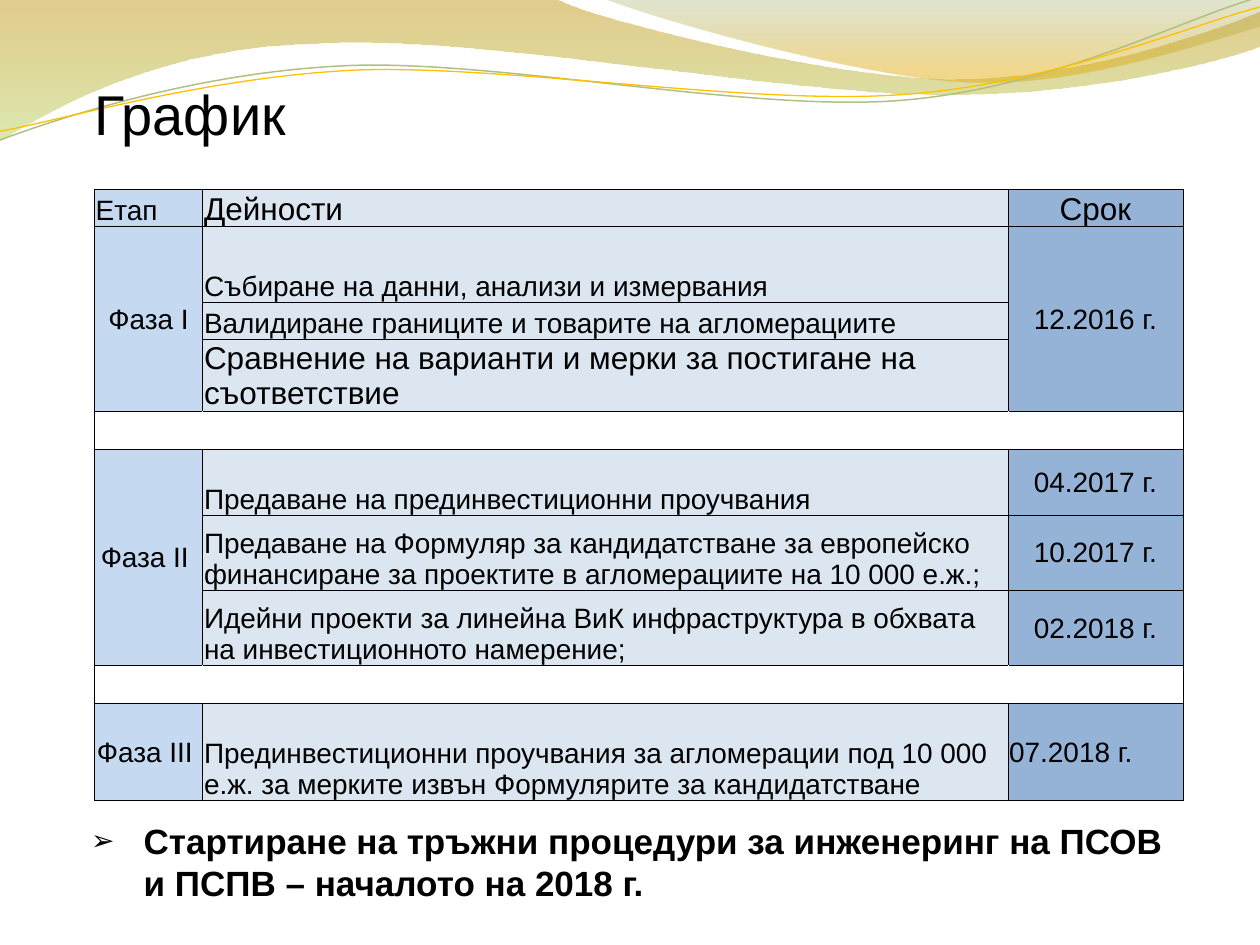
from lxml import etree
from pptx import Presentation
from pptx.dml.color import RGBColor
from pptx.enum import text
from pptx.oxml import parse_xml
from pptx.oxml.ns import nsdecls, qn
from pptx.util import Pt

FONT = "Arial"
BLACK, WHITE = "000000", "FFFFFF"
STAGE, ACTIVITY, DEADLINE = "C5D9F1", "DCE6F1", "95B3D7"
CENTER, LEFT = text.PP_ALIGN.CENTER, text.PP_ALIGN.LEFT
MIDDLE, BOTTOM = text.MSO_ANCHOR.MIDDLE, text.MSO_ANCHOR.BOTTOM


def write(frame, content, size=16, bold=False, align=LEFT, anchor=BOTTOM):
    """Fill a text frame with one formatted paragraph and return it."""
    frame.word_wrap = True
    frame.vertical_anchor = anchor
    paragraph = frame.paragraphs[0]
    paragraph.alignment = align
    run = paragraph.add_run()
    run.text = content
    run.font.name, run.font.size, run.font.bold = FONT, Pt(size), bold
    run.font.color.rgb = RGBColor.from_string(BLACK)
    return paragraph


def add_wave(shapes, start, segments, closed):
    """Draw an outline; a segment holds a line's end or a curve's three points."""
    points = [(Pt(x), Pt(y)) for segment in segments
              for x, y in zip(segment[::2], segment[1::2])]
    builder = shapes.build_freeform(Pt(start[0]), Pt(start[1]))
    builder.add_line_segments(points, close=closed)
    shape = builder.convert_to_shape()
    shape.shadow.inherit = False
    steps = iter(list(shape.element.iter(qn("a:lnTo"))))
    for segment in segments:
        step = next(steps)
        if len(segment) == 6:
            curve = etree.Element(qn("a:cubicBezTo"))
            step.addprevious(curve)
            for control in (step, next(steps), next(steps)):
                curve.append(control[0])
                control.getparent().remove(control)
    return shape


presentation = Presentation()
presentation.slide_width, presentation.slide_height = Pt(720), Pt(540)
slide = presentation.slides.add_slide(presentation.slide_layouts[5])
shapes = slide.shapes

# Filled waves: start, segments, gradient stops (position, colour, opacity)
bands = [
    ((0, 0), [(317, -1), (343, 12, 478, 45, 546, 45), (614, 45, 690, 19, 720, 6.5),
              (721, 26), (708, 32, 626, 55, 537, 54), (446, 54, 275, 20, 185, 24.5),
              (93, 26, 33, 60, -1, 81)],
     [(0, "BD8E00", 45), (100, "C0D871", 55)]),
    ((345, -1), [(366, 8, 491, 45, 554, 47), (616, 50, 692, 23, 720, 15), (720, 0)],
     [(0, "99A963", 30), (80, "E1A900", 45)]),
]
for start, segments, stops in bands:
    band = add_wave(shapes, start, segments, closed=True)
    band.line.fill.background()
    stop_xml = "".join(
        f'<a:gs pos="{position * 1000}"><a:srgbClr val="{color}">'
        f'<a:alpha val="{opacity * 1000}"/></a:srgbClr></a:gs>'
        for position, color, opacity in stops)
    gradient = parse_xml(f'<a:gradFill {nsdecls("a")}><a:gsLst>{stop_xml}</a:gsLst>'
                         '<a:lin ang="5400000" scaled="0"/></a:gradFill>')
    band.element.spPr.find(qn("a:custGeom")).addnext(gradient)

lines = [
    ((0, 80), [(35, 67, 114, 41, 199, 37.5), (284, 34, 427, 64, 513, 57.5),
               (600, 51, 675, 11, 719, -1.5)], "B1C080", 0.85),
    ((0, 75), [(34, 69, 118, 44, 204, 40), (290, 37, 430, 60.5, 516, 54),
               (602, 48, 678, 15, 720, 4)], "FFC000", 0.75),
]
for start, segments, color, width in lines:
    line = add_wave(shapes, start, segments, closed=False)
    line.fill.background()
    line.line.color.rgb = RGBColor.from_string(color)
    line.line.width = Pt(width)

# Title, in front of the waves
title = shapes.title
title.left, title.top, title.width, title.height = Pt(54), Pt(-18), Pt(570), Pt(102)
frame = title.text_frame
frame.auto_size = text.MSO_AUTO_SIZE.NONE
frame.margin_left = frame.margin_right = frame.margin_bottom = 0
write(frame, "График", size=32)
title.element.getparent().append(title.element)

# Schedule: an empty row separates the phases
rows = [
    (21.6, "Етап", "Дейности", "Срок"),
    (43, "Фаза I", "Събиране на данни, анализи и измервания", "12.2016 г."),
    (21.6, "", "Валидиране границите и товарите на агломерациите", ""),
    (41, "", "Сравнение на варианти и мерки за постигане на  съответствие", ""),
    (21.6, "", "", ""),
    (37.5, "Фаза II ", "Предаване на прединвестиционни проучвания", "04.2017 г."),
    (43, "", "Предаване на Формуляр за кандидатстване за европейско финансиране "
             "за проектите в агломерациите на 10 000 е.ж.;", "10.2017 г."),
    (43, "", "Идейни проекти за линейна ВиК инфраструктура в обхвата "
             "на инвестиционното намерение;", "02.2018 г."),
    (21.6, "", "", ""),
    (55.6, "Фаза III ", "Прединвестиционни проучвания за агломерации под 10 000 е.ж. "
                        "за мерките извън Формулярите за кандидатстване", "07.2018 г."),
]
large_cells = {(0, 1), (0, 2), (3, 1)}
left_cells = {(0, 0), (9, 2)}
table = shapes.add_table(len(rows), 3, Pt(54), Pt(108), Pt(622),
                         Pt(sum(row[0] for row in rows))).table
table.first_row = table.horz_banding = False
for column, width in zip(table.columns, (61.9, 460.1, 100)):
    column.width = Pt(width)

for r, (height, *contents) in enumerate(rows):
    table.rows[r].height = Pt(height)
    spacer = not any(contents)
    for c, content in enumerate(contents):
        cell = table.cell(r, c)
        cell.margin_left = cell.margin_right = cell.margin_top = Pt(0.72)
        cell.margin_bottom = 0
        cell.fill.solid()
        cell.fill.fore_color.rgb = RGBColor.from_string(
            WHITE if spacer else (STAGE, ACTIVITY, DEADLINE)[c])
        cell.vertical_anchor = BOTTOM if r == 0 or c == 1 else MIDDLE
        if content:
            centered = c != 1 and (r, c) not in left_cells
            write(cell.text_frame, content, size=18 if (r, c) in large_cells else 16,
                  align=CENTER if centered else LEFT, anchor=None)
        else:
            etree.SubElement(cell.text_frame.paragraphs[0]._p, qn("a:endParaRPr"), sz="1600")
        borders = {"lnL": WHITE if spacer and c > 0 else BLACK,
                   "lnR": WHITE if spacer and c < 2 else BLACK,
                   "lnT": BLACK, "lnB": BLACK}
        for i, (side, color) in enumerate(borders.items()):
            border = etree.Element(qn(f"a:{side}"), w=str(Pt(0.5)))
            fill = etree.SubElement(border, qn("a:solidFill"))
            etree.SubElement(fill, qn("a:srgbClr"), val=color)
            cell._tc.get_or_add_tcPr().insert(i, border)

for first, last, column in [(1, 3, 0), (1, 3, 2), (5, 7, 0)]:
    table.cell(first, column).merge(table.cell(last, column))

# Closing bullet
box = shapes.add_textbox(Pt(42), Pt(465), Pt(644), Pt(55))
paragraph = write(box.text_frame, "Стартиране на тръжни процедури за инженеринг на ПСОВ "
                  "и ПСПВ – началото на 2018 г.", size=20, bold=True,
                  anchor=text.MSO_ANCHOR.TOP)
paragraph.space_before = Pt(4)
properties = paragraph._p.get_or_add_pPr()
properties.set("marL", str(Pt(33)))
properties.set("indent", str(Pt(-30)))
etree.SubElement(properties, qn("a:buSzPct"), val="80000")
etree.SubElement(properties, qn("a:buFont"), typeface=FONT)
etree.SubElement(properties, qn("a:buChar"), char="➢")

presentation.save("out.pptx")
